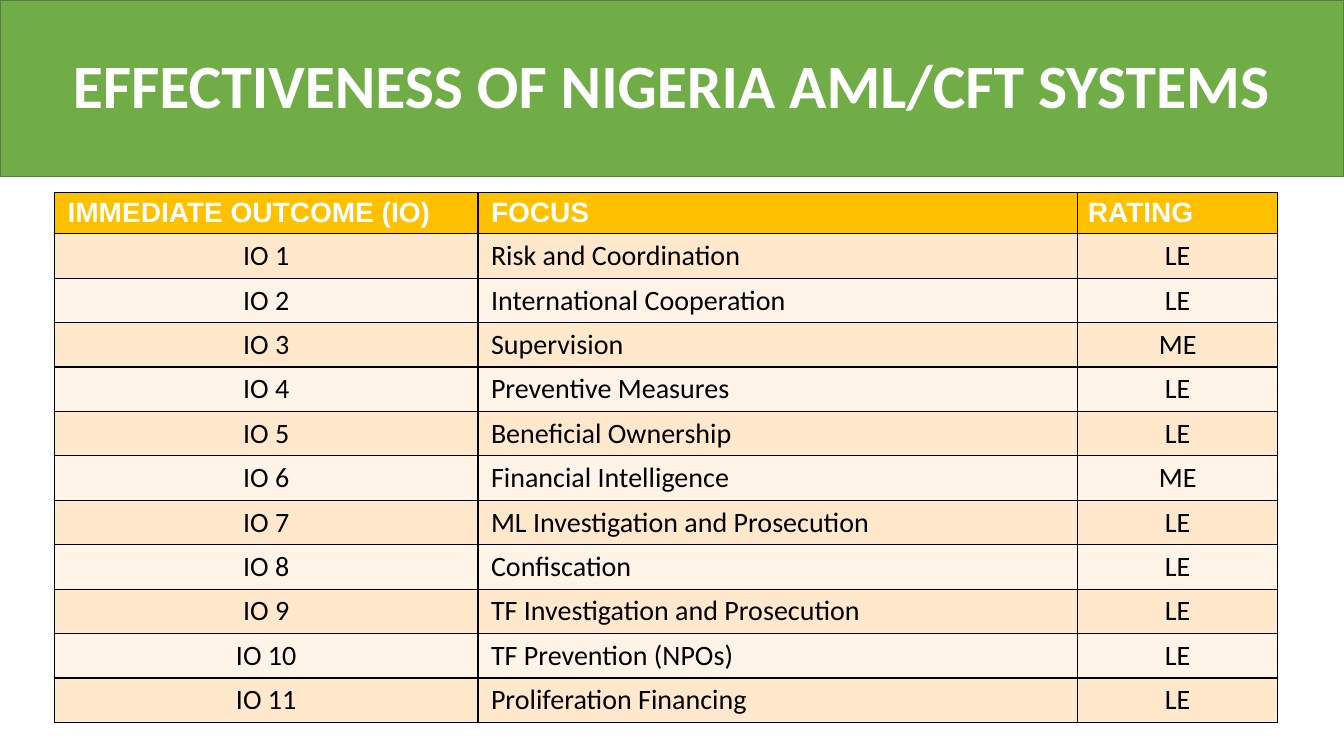
from lxml.etree import SubElement
from pptx import Presentation
from pptx.dml.color import RGBColor
from pptx.enum.shapes import MSO_SHAPE as Preset
from pptx.enum.text import MSO_ANCHOR as Anchor, PP_ALIGN as Align
from pptx.oxml.ns import qn
from pptx.util import Inches, Pt

WHITE = RGBColor(0xFF, 0xFF, 0xFF)
BLACK = RGBColor(0x00, 0x00, 0x00)
GREEN = RGBColor(0x70, 0xAD, 0x47)
DARK_GREEN = RGBColor(0x53, 0x80, 0x35)
GOLD = RGBColor(0xFF, 0xC0, 0x00)
BANDS = (RGBColor(0xFF, 0xE8, 0xCC), RGBColor(0xFF, 0xF4, 0xE7))

TITLE = "EFFECTIVENESS OF NIGERIA AML/CFT SYSTEMS"
HEADINGS = ("IMMEDIATE OUTCOME (IO)", "FOCUS", "RATING")
OUTCOMES = (
    ("Risk and Coordination", "LE"),
    ("International Cooperation", "LE"),
    ("Supervision", "ME"),
    ("Preventive Measures", "LE"),
    ("Beneficial Ownership", "LE"),
    ("Financial Intelligence", "ME"),
    ("ML Investigation and Prosecution", "LE"),
    ("Confiscation", "LE"),
    ("TF Investigation and Prosecution", "LE"),
    ("TF Prevention (NPOs)", "LE"),
    ("Proliferation Financing", "LE"),
)
COLUMN_WIDTHS = (4.2, 5.95, 1.98)
COLUMN_INSETS = (0.13, 0.13, 0.1)
BODY_ALIGNS = (Align.CENTER, Align.LEFT, Align.CENTER)
ROW_HEIGHT = 0.41


class SlideBuilder:
    """Draws styled elements on the current slide."""

    formats = {
        "title": {"name": "Calibri", "size": Pt(44), "bold": True},
        "heading": {"name": "Arial", "size": Pt(20), "bold": True},
        "body": {"name": "Calibri", "size": Pt(20), "bold": False},
    }
    colors = {"title": WHITE, "heading": WHITE, "body": BLACK}

    def __init__(self, page):
        self.page = page

    def add_text(self, frame, text, style, align):
        para = frame.paragraphs[0]
        para.alignment = align
        span = para.add_run()
        span.text = text
        for key, value in self.formats[style].items():
            setattr(span.font, key, value)
        span.font.color.rgb = self.colors[style]
        return para

    def banner(self, text, left, top, width, height):
        box = self.page.shapes.add_shape(
            Preset.RECTANGLE, Inches(left), Inches(top), Inches(width), Inches(height)
        )
        box.shadow.inherit = False
        box.fill.solid()
        box.fill.fore_color.rgb = GREEN
        box.line.color.rgb = DARK_GREEN
        box.line.width = Pt(1)
        box.text_frame.word_wrap = True
        box.text_frame.vertical_anchor = Anchor.MIDDLE
        self.add_text(box.text_frame, text, "title", Align.CENTER).line_spacing = 0.9

    def cell(self, cell, text, style, align, fill, inset):
        cell.margin_left = cell.margin_right = Inches(inset)
        cell.margin_top = cell.margin_bottom = Inches(0.05)
        self.add_text(cell.text_frame, text, style, align)
        properties = cell._tc.get_or_add_tcPr()
        for side in ("a:lnL", "a:lnR", "a:lnT", "a:lnB"):
            border = SubElement(properties, qn(side), w=str(Pt(1)))
            paint = SubElement(border, qn("a:solidFill"))
            SubElement(paint, qn("a:srgbClr"), val=str(BLACK))
        cell.fill.solid()
        cell.fill.fore_color.rgb = fill

    def table(self, rows, left, top):
        grid = self.page.shapes.add_table(
            len(rows), len(COLUMN_WIDTHS), Inches(left), Inches(top),
            Inches(sum(COLUMN_WIDTHS)), Inches(ROW_HEIGHT * len(rows)),
        ).table
        for column, width in zip(grid.columns, COLUMN_WIDTHS):
            column.width = Inches(width)
        for index, texts in enumerate(rows):
            grid.rows[index].height = Inches(ROW_HEIGHT)
            style = "body" if index else "heading"
            fill = BANDS[(index - 1) % 2] if index else GOLD
            for column, text in enumerate(texts):
                align = BODY_ALIGNS[column] if index else Align.LEFT
                self.cell(grid.cell(index, column), text, style, align, fill,
                          COLUMN_INSETS[column])


def main():
    deck = Presentation()
    deck.slide_width, deck.slide_height = Inches(13.33), Inches(7.5)
    builder = SlideBuilder(deck.slides.add_slide(deck.slide_layouts[6]))
    builder.banner(TITLE, 0, 0, 13.33, 1.75)
    outcomes = [(f"IO {number}", *outcome) for number, outcome in enumerate(OUTCOMES, 1)]
    builder.table([HEADINGS, *outcomes], 0.54, 1.91)
    deck.save("out.pptx")


if __name__ == "__main__":
    main()
